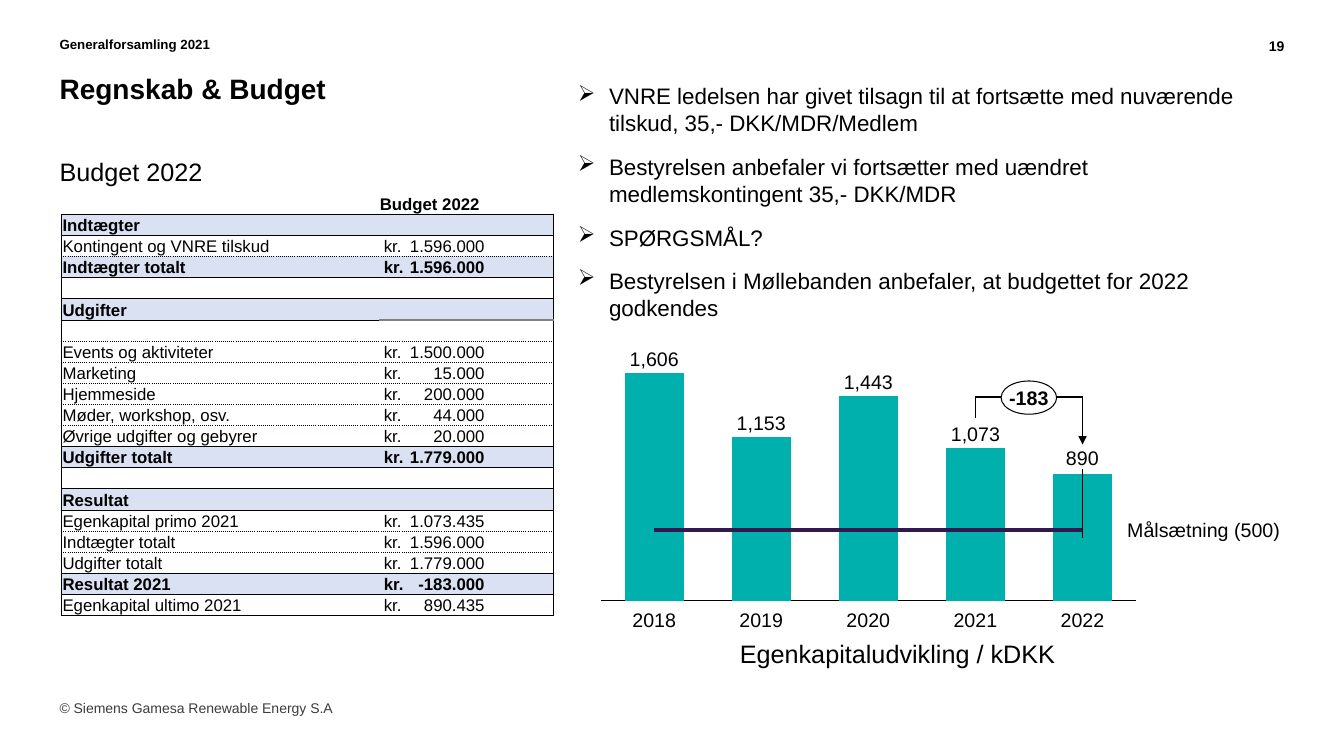
import pptx
import pptx.chart.data
import pptx.dml.color
import pptx.enum.chart
import pptx.enum.shapes
import pptx.enum.text
import pptx.oxml
import pptx.oxml.ns
import pptx.util
from lxml import etree

BLACK = pptx.dml.color.RGBColor(0x00, 0x00, 0x00)
WHITE = pptx.dml.color.RGBColor(0xFF, 0xFF, 0xFF)
GREY = pptx.dml.color.RGBColor(0x3C, 0x3C, 0x3C)
RULE_GREY = pptx.dml.color.RGBColor(0x80, 0x80, 0x80)
BAND = pptx.dml.color.RGBColor(0xD9, 0xE1, 0xF2)
TEAL = pptx.dml.color.RGBColor(0x00, 0xB0, 0xAD)
PURPLE = pptx.dml.color.RGBColor(0x32, 0x18, 0x50)
FONT = "Arial"
PLAIN_TABLE = "{2D5ABB26-0587-4C30-8999-92F81FD0307C}"
SLIDE_WIDTH, SLIDE_HEIGHT = pptx.util.Inches(13.33), pptx.util.Inches(7.5)
ALIGN, ANCHOR = pptx.enum.text.PP_ALIGN, pptx.enum.text.MSO_ANCHOR
qn = pptx.oxml.ns.qn

POINTS = [
    "VNRE ledelsen har givet tilsagn til at fortsætte med nuværende tilskud, 35,- DKK/MDR/Medlem",
    "Bestyrelsen anbefaler vi fortsætter med uændret medlemskontingent 35,- DKK/MDR",
    "SPØRGSMÅL?",
    "Bestyrelsen i Møllebanden anbefaler, at budgettet for 2022 godkendes",
]
# Label, amount, banded row, rule below
BUDGET = [
    ("", "Budget 2022", False, "solid"),
    ("Indtægter", "", True, "solid"),
    ("Kontingent og VNRE tilskud", "1.596.000", False, "sysDot"),
    ("Indtægter totalt", "1.596.000", True, "solid"),
    ("", "", False, "solid"),
    ("Udgifter", "", True, "solid"),
    ("", "", False, "sysDot"),
    ("Events og aktiviteter", "1.500.000", False, "sysDot"),
    ("Marketing", "15.000", False, "sysDot"),
    ("Hjemmeside", "200.000", False, "sysDot"),
    ("Møder, workshop, osv.", "44.000", False, "sysDot"),
    ("Øvrige udgifter og gebyrer", "20.000", False, "solid"),
    ("Udgifter totalt", "1.779.000", True, "solid"),
    ("", "", False, "solid"),
    ("Resultat", "", True, "solid"),
    ("Egenkapital primo 2021", "1.073.435", False, "sysDot"),
    ("Indtægter totalt", "1.596.000", False, "sysDot"),
    ("Udgifter totalt", "1.779.000", False, "solid"),
    ("Resultat 2021", "-183.000", True, "solid"),
    ("Egenkapital ultimo 2021", "890.435", False, "solid"),
]
EQUITY = {2018: 1606, 2019: 1153, 2020: 1443, 2021: 1073, 2022: 890}
TARGET_SHARE = 31

# Chart frame and plot area, in percent of the slide
CHART = (44.04, 48.13, 41.19, 32.53)
PLOT = (0.016, 0.037, 0.967, 0.926)
PLOT_LEFT, PLOT_TOP = CHART[0] + PLOT[0] * CHART[2], CHART[1] + PLOT[1] * CHART[3]
PLOT_WIDTH, PLOT_HEIGHT = PLOT[2] * CHART[2], PLOT[3] * CHART[3]


def place(left, top, *size):
    """Turn percentages of the slide into lengths."""
    sides = (SLIDE_WIDTH, SLIDE_HEIGHT) * 2
    return [int(side * share / 100) for side, share in zip(sides, (left, top, *size))]


def write(para, text, size=14, bold=False, color=BLACK, align=ALIGN.LEFT):
    span = para.add_run()
    span.text = text
    span.font.name, span.font.size = FONT, pptx.util.Pt(size)
    span.font.bold, span.font.color.rgb = bold, color
    para.alignment = align


def set_frame(frame, inset=0, wrap=True, anchor=ANCHOR.TOP):
    frame.margin_left = frame.margin_right = pptx.util.Inches(inset)
    frame.margin_top = frame.margin_bottom = pptx.util.Inches(inset / 2)
    frame.word_wrap, frame.vertical_anchor = wrap, anchor
    frame.auto_size = pptx.enum.text.MSO_AUTO_SIZE.NONE


def add_text(page, area, text, inset=0, wrap=True, anchor=ANCHOR.TOP, **style):
    box = page.shapes.add_textbox(*place(*area))
    set_frame(box.text_frame, inset, wrap, anchor)
    write(box.text_frame.paragraphs[0], text, **style)


def add_bullets(page, area, items):
    frame = page.shapes.add_textbox(*place(*area)).text_frame
    set_frame(frame)
    for index, item in enumerate(items):
        para = frame.add_paragraph() if index else frame.paragraphs[0]
        props = para._p.get_or_add_pPr()
        indent = pptx.util.Inches(0.31)
        props.set("marL", str(indent))
        props.set("indent", str(-indent))
        etree.SubElement(props, qn("a:buChar"), char="➢")
        if index:
            para.space_before = pptx.util.Pt(12)
        write(para, item, size=16)


def set_border(cell, side, dash="solid", color=BLACK, width=0.5):
    line = etree.SubElement(cell._tc.get_or_add_tcPr(), qn("a:ln" + side),
                            w=str(pptx.util.Pt(width)))
    fill = etree.SubElement(line, qn("a:solidFill"))
    etree.SubElement(fill, qn("a:srgbClr"), val=str(color))
    etree.SubElement(line, qn("a:prstDash"), val=dash)


def fill_cell(cell, text, bold, tab=False):
    cell.margin_left = cell.margin_right = pptx.util.Inches(0.05 if tab else 0.01)
    cell.margin_top, cell.margin_bottom = pptx.util.Pt(0.6), 0
    cell.vertical_anchor = ANCHOR.BOTTOM
    para = cell.text_frame.paragraphs[0]
    if tab:
        stops = etree.SubElement(para._p.get_or_add_pPr(), qn("a:tabLst"))
        etree.SubElement(stops, qn("a:tab"), pos=str(pptx.util.Inches(1)), algn="r")
    if text:
        write(para, text, size=12, bold=bold)
    else:
        etree.SubElement(para._p, qn("a:endParaRPr"), sz="1200")


def add_budget_table(page, area):
    table = page.shapes.add_table(len(BUDGET), 2, *place(*area)).table
    table.first_row = table.horz_banding = False
    table._tbl.tblPr.find(qn("a:tableStyleId")).text = PLAIN_TABLE
    width, height = place(*area)[2:]
    table.columns[0].width = int(width * 0.645)
    table.columns[1].width = width - table.columns[0].width
    above = None
    for index, (label, amount, banded, below) in enumerate(BUDGET):
        table.rows[index].height = height // len(BUDGET)
        is_head = index == 0
        has_sum = bool(amount) and not is_head
        texts = (label, "kr.\t" + amount if has_sum else amount)
        for column, text in enumerate(texts):
            cell = table.cell(index, column)
            fill_cell(cell, text, banded or is_head, tab=has_sum and column == 1)
            if not is_head:
                set_border(cell, "R" if column else "L")
            # The rule under the expenses heading is grey on the right
            grey = {"color": RULE_GREY, "width": 1}
            heading = 5
            if above:
                set_border(cell, "T", above, **(grey if column and index == heading + 1 else {}))
            set_border(cell, "B", below, **(grey if column and index == heading else {}))
            if banded:
                cell.fill.solid()
                cell.fill.fore_color.rgb = BAND
            else:
                cell.fill.background()
        above = below


def move_target_to_line(plot_area):
    """Draw the second series as a line on an unmarked 0-100 axis."""
    series = plot_area.findall(".//" + qn("c:ser"))[1]
    for tag in ("c:invertIfNegative", "c:spPr"):
        for old in series.findall(qn(tag)):
            series.remove(old)
    space = 'xmlns:c="%s" xmlns:a="%s"' % (pptx.oxml.ns.nsuri("c"), pptx.oxml.ns.nsuri("a"))
    look = (f'<c:spPr {space}><a:ln w="{pptx.util.Pt(3)}"><a:solidFill><a:srgbClr val="{PURPLE}"/>'
            '</a:solidFill></a:ln></c:spPr>')
    series.find(qn("c:tx")).addnext(pptx.oxml.parse_xml(look))
    marker = etree.Element(qn("c:marker"))
    etree.SubElement(marker, qn("c:symbol"), val="none")
    series.find(qn("c:spPr")).addnext(marker)
    etree.SubElement(series, qn("c:smooth"), val="0")
    line = pptx.oxml.parse_xml(
        f'<c:lineChart {space}><c:grouping val="standard"/><c:varyColors val="0"/>'
        '<c:marker val="1"/><c:axId val="501"/><c:axId val="502"/></c:lineChart>')
    line.insert(2, series)
    plot_area.find(qn("c:barChart")).addnext(line)
    limits = '<c:max val="100"/><c:min val="0"/>'
    for tag, own, other, scale, hidden, side, cross in (
            ("valAx", 502, 501, limits, 0, "r", "max"), ("catAx", 501, 502, "", 1, "b", "autoZero")):
        plot_area.findall(qn("c:valAx"))[-1].addnext(pptx.oxml.parse_xml(
            f'<c:{tag} {space}><c:axId val="{own}"/><c:scaling><c:orientation val="minMax"/>{scale}'
            f'</c:scaling><c:delete val="{hidden}"/><c:axPos val="{side}"/><c:majorTickMark val="none"/>'
            '<c:minorTickMark val="none"/><c:tickLblPos val="none"/><c:spPr><a:ln><a:noFill/></a:ln></c:spPr>'
            f'<c:crossAx val="{other}"/><c:crosses val="{cross}"/></c:{tag}>'))


def set_layout(parent, position, **shares):
    layout = etree.Element(qn("c:layout"))
    manual = etree.SubElement(layout, qn("c:manualLayout"))
    for tag, value in shares.items():
        etree.SubElement(manual, qn("c:" + tag), val=str(value))
    for old in parent.findall(qn("c:layout")):
        parent.remove(old)
    parent.insert(position, layout)


def add_equity_chart(page):
    data = pptx.chart.data.CategoryChartData()
    data.categories = [str(number) for number in range(1, len(EQUITY) + 1)]
    data.add_series("Series 1", list(EQUITY.values()))
    data.add_series("Series 2", [TARGET_SHARE] * len(EQUITY))
    chart = page.shapes.add_chart(pptx.enum.chart.XL_CHART_TYPE.COLUMN_STACKED, *place(*CHART), data).chart
    chart.has_legend = chart.has_title = False
    chart.font.name, chart.font.size, chart.font.color.rgb = FONT, pptx.util.Pt(10), BLACK
    bars = chart.plots[0]
    bars.gap_width, bars.overlap, bars.vary_by_categories = 80, 100, False
    bars.series[0].format.fill.solid()
    bars.series[0].format.fill.fore_color.rgb = TEAL
    scale = chart.value_axis
    scale.minimum_scale, scale.maximum_scale = 0, max(EQUITY.values())
    scale.has_major_gridlines = scale.visible = False
    years = chart.category_axis
    years.tick_label_position = pptx.enum.chart.XL_TICK_LABEL_POSITION.NONE
    years.major_tick_mark = pptx.enum.chart.XL_TICK_MARK.NONE
    years.format.line.color.rgb, years.format.line.width = BLACK, pptx.util.Pt(0.75)
    # The last bar's own value label, lifted above the bar
    label = bars.series[0].points[len(EQUITY) - 1].data_label
    label.font.size, label.font.name, label.font.color.rgb = pptx.util.Pt(14), FONT, BLACK
    mark = bars.series[0]._element.find(".//" + qn("c:dLbl"))
    set_layout(mark, 1, x=0, y=-0.32)
    plot_area = chart._chartSpace.find(".//" + qn("c:plotArea"))
    set_layout(plot_area, 0, layoutTarget="inner", xMode="edge", yMode="edge",
               **dict(zip("xywh", PLOT)))
    move_target_to_line(plot_area)


def add_line(page, start, end, arrow=False):
    line = page.shapes.add_connector(pptx.enum.shapes.MSO_CONNECTOR.STRAIGHT, *place(*start), *place(*end))
    line.line.color.rgb, line.line.width = BLACK, pptx.util.Pt(1)
    if arrow:
        etree.SubElement(line.line._get_or_add_ln(), qn("a:tailEnd"), type="triangle")
    etree.SubElement(line._element.spPr, qn("a:effectLst"))


def year_center(index):
    return PLOT_LEFT + PLOT_WIDTH * (index + 0.5) / len(EQUITY)


def add_chart_labels(page):
    width, height = 4, 3.07
    for index, (year, value) in enumerate(EQUITY.items()):
        left = year_center(index) - width / 2
        add_text(page, (left, 80.4, width, height), str(year), wrap=False, align=ALIGN.CENTER)
        if index < len(EQUITY) - 1:
            bar_top = PLOT_TOP + PLOT_HEIGHT * (1 - value / max(EQUITY.values()))
            add_text(page, (left, bar_top - height - 0.4, width, height), f"{value:,}",
                     wrap=False, anchor=ANCHOR.BOTTOM, align=ALIGN.CENTER)
    add_text(page, (83.87, 68.53, 11.33, height), "Målsætning (500)", wrap=False, anchor=ANCHOR.MIDDLE)


def add_change_bracket(page):
    before, after, top = year_center(3), year_center(4), 52.53
    add_line(page, (before, 55.33), (before, top))
    add_line(page, (before, top), (after, top))
    add_line(page, (after, top), (after, 58.8), arrow=True)
    bubble = page.shapes.add_shape(pptx.enum.shapes.MSO_SHAPE.OVAL, *place(74.49, 50.4, 4.13, 4.4))
    bubble.shadow.inherit = False
    bubble.fill.solid()
    bubble.fill.fore_color.rgb = WHITE
    bubble.line.color.rgb, bubble.line.width = BLACK, pptx.util.Pt(0.75)
    set_frame(bubble.text_frame, wrap=False, anchor=ANCHOR.MIDDLE)
    write(bubble.text_frame.paragraphs[0], "-183", bold=True, align=ALIGN.CENTER)


def main():
    deck = pptx.Presentation()
    deck.slide_width, deck.slide_height = SLIDE_WIDTH, SLIDE_HEIGHT
    page = deck.slides.add_slide(deck.slide_layouts[5])
    # Headings and footer
    title = page.shapes.title
    title.left, title.top, title.width, title.height = place(4.43, 9.47, 69.39, 4.53)
    set_frame(title.text_frame)
    write(title.text_frame.paragraphs[0], "Regnskab & Budget", size=20, bold=True)
    add_text(page, (4.43, 4.8, 69.39, 2.67), "Generalforsamling 2021", size=9.5, bold=True)
    add_text(page, (90.47, 4.93, 5.1, 3.2), "19", size=10, bold=True, align=ALIGN.RIGHT)
    add_text(page, (4.43, 20.67, 44.49, 4.53), "Budget 2022", size=18)
    add_text(page, (4.43, 92.53, 22.66, 2.27), "© Siemens Gamesa Renewable Energy S.A", size=10, color=GREY)
    # Budget and recommendations
    add_budget_table(page, (4.58, 25.47, 36.6, 55.6))
    add_bullets(page, (42.99, 10.93, 52.59, 41.73), POINTS)
    # Equity development
    add_equity_chart(page)
    add_chart_labels(page)
    add_change_bracket(page)
    add_text(page, (54.31, 83.73, 27.83, 5.33), "Egenkapitaludvikling / kDKK", inset=0.1, size=18)
    deck.save("out.pptx")


if __name__ == "__main__":
    main()
